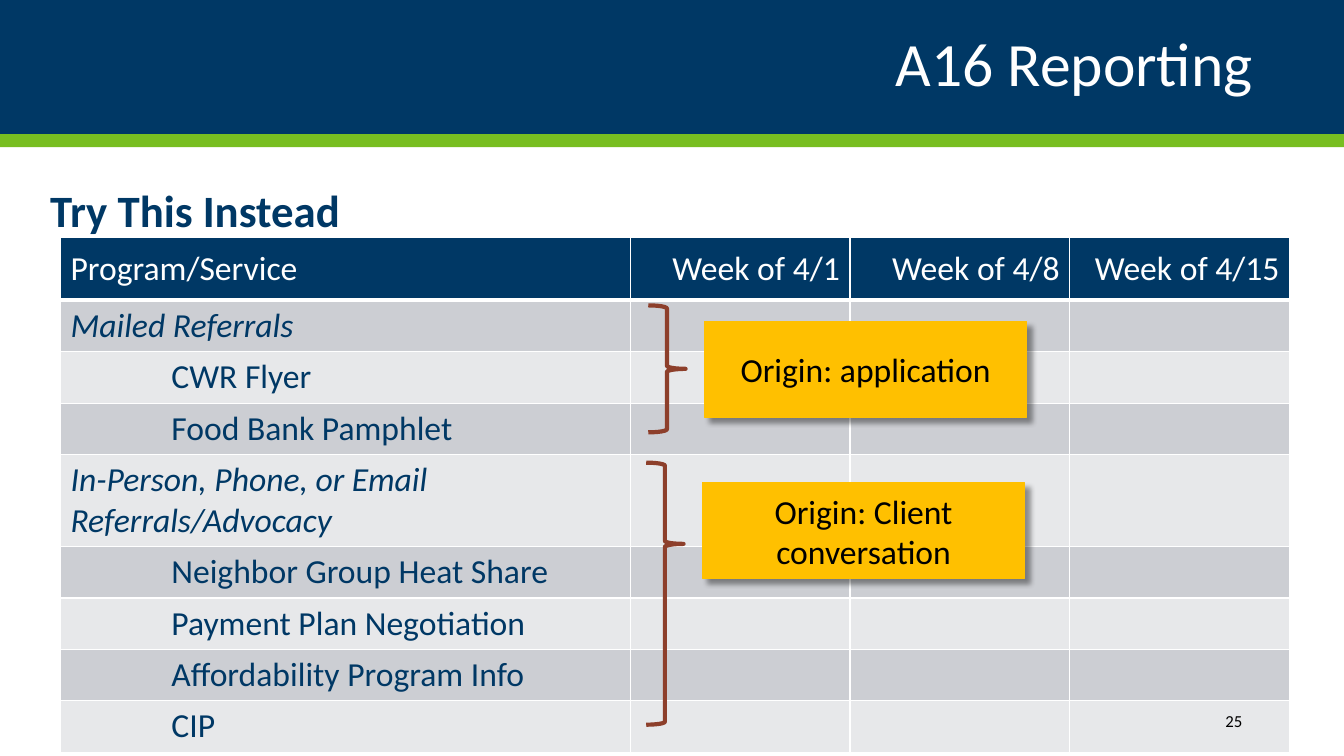
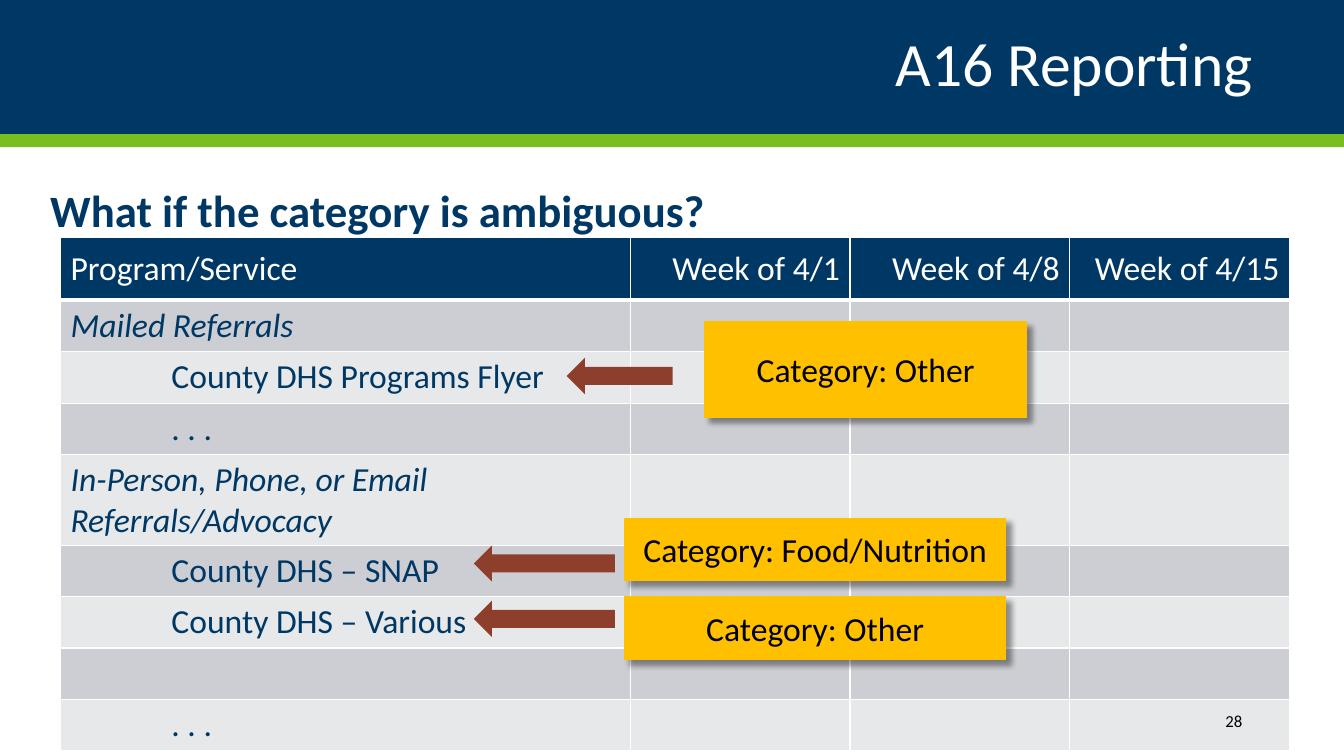
from lxml.etree import SubElement
from pptx import Presentation
from pptx.dml.color import RGBColor
from pptx.enum.shapes import MSO_SHAPE as Kind
from pptx.enum.text import MSO_ANCHOR as Anchor, PP_ALIGN as Align
from pptx.oxml.ns import qn
from pptx.util import Inches, Pt

NAVY = RGBColor(0x00, 0x38, 0x65)
GREEN = RGBColor(0x78, 0xBE, 0x21)
GOLD = RGBColor(0xFF, 0xC0, 0x00)
RUST = RGBColor(0x8D, 0x3F, 0x2B)
DARK = RGBColor(0xCC, 0xCE, 0xD3)
PALE = RGBColor(0xE7, 0xE8, 0xEA)
WHITE = RGBColor(0xFF, 0xFF, 0xFF)
BLACK = RGBColor(0x00, 0x00, 0x00)

TITLE = {"size": Pt(44)}
HEADING = {"size": Pt(32), "bold": True}
LABEL = {"size": Pt(24), "bold": False}
GROUP = {**LABEL, "italic": True}
NUMBER = {"size": Pt(12)}

WIDE, TALL = 13.33, 7.5
BAND = 1.33
HEAD = ["Program/Service", "Week of 4/1", "Week of 4/8", "Week of 4/15"]
COLS = [5.65, 2.18, 2.18, 2.18]
MAIL = "Mailed Referrals"
TALK = "In-Person, Phone, or Email Referrals/Advocacy"

# Callouts: text and box; marks: kind, box and adjustments
PAGES = [
    {
        "heading": "Try This Instead",
        "number": "25",
        "rows": [MAIL, "CWR Flyer", "Food Bank Pamphlet", TALK,
                 "Neighbor Group Heat Share", "Payment Plan Negotiation",
                 "Affordability Program Info", "CIP"],
        "callouts": [("Origin: application", (6.99, 3.19, 3.19, 0.95)),
                     ("Origin: Client conversation", (6.97, 4.79, 3.19, 0.95))],
        "marks": [(Kind.RIGHT_BRACE, (6.43, 3.03, 0.37, 1.26), ()),
                  (Kind.RIGHT_BRACE, (6.41, 4.59, 0.37, 2.6), (0.08, 0.31))],
    },
    {
        "heading": "What if the category is ambiguous?",
        "number": "28",
        "rows": [MAIL, "County DHS Programs Flyer", ". . .", TALK,
                 "County DHS – SNAP", "County DHS – Various", "", ". . ."],
        "callouts": [("Category: Other", (6.99, 3.19, 3.19, 0.95)),
                     ("Category: Food/Nutrition", (6.2, 5.14, 3.77, 0.62)),
                     ("Category: Other", (6.2, 5.92, 3.77, 0.62))],
        "marks": [(Kind.LEFT_ARROW, (5.62, 3.55, 1.05, 0.36), ()),
                  (Kind.LEFT_ARROW, (4.7, 5.41, 1.4, 0.36), ()),
                  (Kind.LEFT_ARROW, (4.7, 5.96, 1.4, 0.36), ())],
    },
]


def write(frame, text, style, color, align=Align.LEFT):
    frame.word_wrap = True
    para = frame.paragraphs[0]
    para.alignment = align
    run = para.add_run()
    run.text = text
    run.font.name = "Calibri"
    run.font.color.rgb = color
    for name, value in style.items():
        setattr(run.font, name, value)


def draw(slide, kind, box, fill=None, line=None, width=1):
    """Add a preset shape without shadow; no colour means no fill or line."""
    shape = slide.shapes.add_shape(kind, *map(Inches, box))
    shape.shadow.inherit = False
    for part, color in ((shape.fill, fill), (shape.line.fill, line)):
        if color is None:
            part.background()
        else:
            part.solid()
            part.fore_color.rgb = color
    if line is not None:
        shape.line.width = Pt(width)
    return shape


deck = Presentation()
deck.slide_width, deck.slide_height = Inches(WIDE), Inches(TALL)

for page in PAGES:
    slide = deck.slides.add_slide(deck.slide_layouts[6])

    # Title band
    draw(slide, Kind.RECTANGLE, (0, BAND, WIDE, 0.13), GREEN)
    title = draw(slide, Kind.RECTANGLE, (0, 0, WIDE, BAND), NAVY).text_frame
    title.margin_left = title.margin_right = Inches(0.9)
    title.vertical_anchor = Anchor.MIDDLE
    write(title, "A16 Reporting", TITLE, WHITE, Align.RIGHT)
    title.paragraphs[0].line_spacing = 0.9

    # Table
    names = page["rows"]
    table = slide.shapes.add_table(
        len(names) + 1, len(COLS), Inches(0.6), Inches(2.36),
        Inches(sum(COLS)), Inches(4.7)).table
    for col, width in zip(table.columns, COLS):
        col.width = Inches(width)
    for r, row in enumerate(table.rows):
        row.height = Inches(0.51 if r else 0.62)
        texts = [names[r - 1], "", "", ""] if r else HEAD
        for c, (cell, text) in enumerate(zip(row.cells, texts)):
            cell.vertical_anchor = Anchor.MIDDLE
            group = text in (MAIL, TALK)
            if text:
                write(cell.text_frame, text, GROUP if group else LABEL,
                      NAVY if r else WHITE, Align.RIGHT if c else Align.LEFT)
            if r and c == 0 and not group:
                cell.margin_left = Inches(1.1)
            props = cell._tc.get_or_add_tcPr()
            for side in ("lnL", "lnR", "lnT", "lnB"):
                thick = 3 if r == 0 and side == "lnB" else 1
                edge = SubElement(props, qn(f"a:{side}"), w=str(Pt(thick)))
                fill = SubElement(edge, qn("a:solidFill"))
                SubElement(fill, qn("a:srgbClr"), val=str(WHITE))
            cell.fill.solid()
            cell.fill.fore_color.rgb = (DARK if r % 2 else PALE) if r else NAVY

    # Heading and slide number
    box = slide.shapes.add_textbox(*map(Inches, (0.4, 1.76, 7.4, 0.6)))
    write(box.text_frame, page["heading"], HEADING, NAVY)
    box = slide.shapes.add_textbox(*map(Inches, (10.82, 6.95, 1.6, 0.4)))
    box.text_frame.vertical_anchor = Anchor.MIDDLE
    write(box.text_frame, page["number"], NUMBER, BLACK, Align.RIGHT)

    # Callouts
    for text, place in page["callouts"]:
        note = draw(slide, Kind.RECTANGLE, place, GOLD, GOLD, 0.85)
        note.text_frame.vertical_anchor = Anchor.MIDDLE
        write(note.text_frame, text, LABEL, BLACK, Align.CENTER)
        shade = SubElement(
            note.element.spPr.find(qn("a:effectLst")), qn("a:outerShdw"),
            blurRad=str(Pt(4)), dist=str(Pt(5)), dir=str(45 * 60000),
            algn="tl", rotWithShape="0")
        color = SubElement(shade, qn("a:srgbClr"), val=str(BLACK))
        SubElement(color, qn("a:alpha"), val="40000")

    # Braces and arrows
    for kind, place, bends in page["marks"]:
        if kind == Kind.RIGHT_BRACE:
            mark = draw(slide, kind, place, line=RUST, width=3)
        else:
            mark = draw(slide, kind, place, RUST)
        for i, bend in enumerate(bends):
            mark.adjustments[i] = bend

deck.save("out.pptx")
